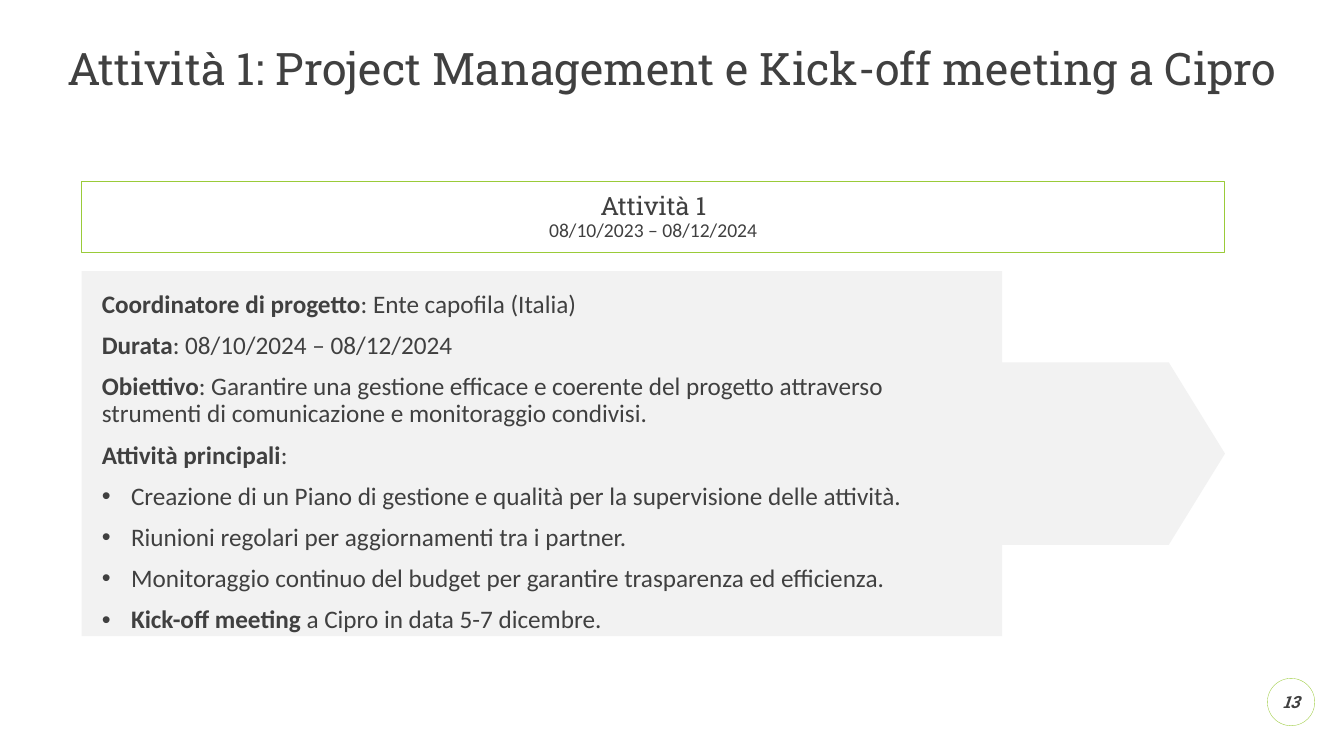
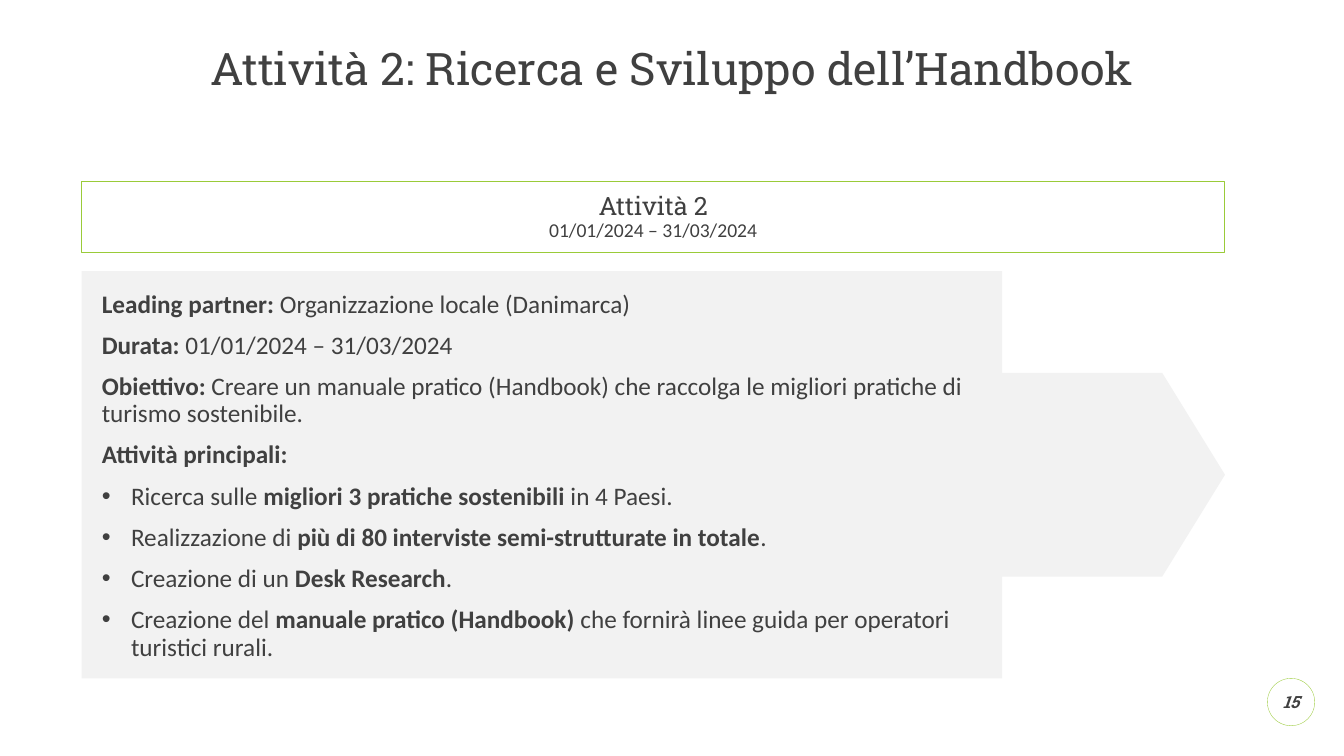
from dataclasses import dataclass

from lxml import etree
from pptx import Presentation
from pptx.dml.color import RGBColor
from pptx.enum import shapes, text
from pptx.oxml import ns
from pptx.util import Inches, Pt


@dataclass(frozen=True)
class Theme:
    ink: RGBColor = RGBColor(0x40, 0x40, 0x40)
    green: RGBColor = RGBColor(0x9A, 0xCB, 0x39)
    panel: RGBColor = RGBColor(0xF2, 0xF2, 0xF2)
    heading_font: str = "Roboto Slab"
    body_font: str = "Calibri"
    title_size: int = 32
    body_size: int = 18
    date_size: int = 14
    number_size: int = 12
    line_spacing: float = 0.9
    space_before: int = 10
    left: float = 0.81
    width: float = 11.34
    bullet_indent: float = 0.29


THEME = Theme()
CENTER = text.PP_ALIGN.CENTER
LEFT = text.PP_ALIGN.LEFT
TOP = text.MSO_ANCHOR.TOP
MIDDLE = text.MSO_ANCHOR.MIDDLE

# Double asterisks enclose bold words; a leading "• " makes a bullet.
ACTIVITIES = [
    {
        "title": "Attività 1: Project Management e Kick-off meeting a Cipro",
        "name": "Attività 1",
        "dates": "08/10/2023 – 08/12/2024",
        "number": "13",
        "panel_height": 3.62,
        "details": [
            "**Coordinatore di progetto**: Ente capofila (Italia)",
            "**Durata**: 08/10/2024 – 08/12/2024",
            "**Obiettivo**: Garantire una gestione efficace e coerente del progetto "
            "attraverso strumenti di comunicazione e monitoraggio condivisi.",
            "**Attività principali**:",
            "• Creazione di un Piano di gestione e qualità per la supervisione delle attività.",
            "• Riunioni regolari per aggiornamenti tra i partner.",
            "• Monitoraggio continuo del budget per garantire trasparenza ed efficienza.",
            "• **Kick-off meeting** a Cipro in data 5-7 dicembre.",
        ],
    },
    {
        "title": "Attività 2: Ricerca e Sviluppo dell’Handbook",
        "name": "Attività 2",
        "dates": "01/01/2024 – 31/03/2024",
        "number": "15",
        "panel_height": 4.04,
        "details": [
            "**Leading partner:** Organizzazione locale (Danimarca)",
            "**Durata:** 01/01/2024 – 31/03/2024",
            "**Obiettivo:** Creare un manuale pratico (Handbook) che raccolga "
            "le migliori pratiche di turismo sostenibile.",
            "**Attività principali:**",
            "• Ricerca sulle **migliori 3 pratiche sostenibili** in 4 Paesi.",
            "• Realizzazione di **più di 80 interviste semi-strutturate in totale**.",
            "• Creazione di un **Desk Research**.",
            "• Creazione del **manuale pratico (Handbook)** che fornirà linee guida "
            "per operatori turistici rurali.",
        ],
    },
]


def style_run(r, font, size, bold=False, italic=False):
    r.font.name = font
    r.font.size = Pt(size)
    r.font.bold = bold
    r.font.italic = italic
    r.font.color.rgb = THEME.ink


def style_paragraph(p, align=LEFT, space_before=0):
    p.alignment = align
    p.line_spacing = THEME.line_spacing
    p.space_before = Pt(space_before)


def set_frame(tf, anchor=MIDDLE, insets=(0, 0, 0, 0)):
    """Insets run left, top, right, bottom, in inches."""
    tf.word_wrap = True
    tf.auto_size = text.MSO_AUTO_SIZE.NONE
    tf.vertical_anchor = anchor
    (tf.margin_left, tf.margin_top,
     tf.margin_right, tf.margin_bottom) = map(Inches, insets)


def add_box(slide, kind, box, fill=None, line=None, line_width=0.75):
    sp = slide.shapes.add_shape(kind, *map(Inches, box))
    sp.shadow.inherit = False
    if fill is None:
        sp.fill.background()
    else:
        sp.fill.solid()
        sp.fill.fore_color.rgb = fill
    if line is None:
        sp.line.fill.background()
    else:
        sp.line.color.rgb = line
        sp.line.width = Pt(line_width)
    return sp


def set_title(slide, title):
    sp = slide.shapes.title
    sp.left, sp.top, sp.width, sp.height = map(Inches, (0.47, 0.47, 12.4, 0.47))
    tf = sp.text_frame
    set_frame(tf)
    tf.text = title
    p = tf.paragraphs[0]
    style_paragraph(p, CENTER)
    style_run(p.runs[0], THEME.heading_font, THEME.title_size)


def add_header(slide, name, dates):
    sp = add_box(slide, shapes.MSO_SHAPE.RECTANGLE,
                 (THEME.left, 1.8, THEME.width, 0.71), line=THEME.green)
    tf = sp.text_frame
    set_frame(tf, TOP, (0, 0.12, 0, 0))
    p = tf.paragraphs[0]
    p.text = f"{name}\v{dates}"
    style_paragraph(p, CENTER, THEME.space_before)
    name_run, dates_run = p.runs
    style_run(name_run, THEME.heading_font, THEME.body_size)
    style_run(dates_run, THEME.body_font, THEME.date_size)


def add_bullet(p):
    pPr = p._p.get_or_add_pPr()
    indent = Inches(THEME.bullet_indent)
    pPr.set("marL", str(indent))
    pPr.set("indent", str(-indent))
    etree.SubElement(pPr, ns.qn("a:buFont")).set("typeface", "Arial")
    etree.SubElement(pPr, ns.qn("a:buChar")).set("char", "•")


def add_details(slide, details, height):
    sp = add_box(slide, shapes.MSO_SHAPE.RIGHT_ARROW_CALLOUT,
                 (THEME.left, 2.69, THEME.width, height), fill=THEME.panel)
    for i, value in enumerate((0.5, 0.25, 0.154, 0.805)):
        sp.adjustments[i] = value
    tf = sp.text_frame
    set_frame(tf, TOP, (0.2, 0.2, 0.2, 0))
    for i, detail in enumerate(details):
        p = tf.add_paragraph() if i else tf.paragraphs[0]
        style_paragraph(p, space_before=THEME.space_before)
        if detail.startswith("• "):
            add_bullet(p)
        for j, part in enumerate(detail.removeprefix("• ").split("**")):
            if part:
                r = p.add_run()
                r.text = part
                style_run(r, THEME.body_font, THEME.body_size, bold=j % 2 == 1)


def add_page_number(slide, number):
    sp = add_box(slide, shapes.MSO_SHAPE.OVAL, (12.57, 6.73, 0.47, 0.47),
                 line=THEME.green, line_width=0.25)
    tf = sp.text_frame
    set_frame(tf)
    tf.text = number
    p = tf.paragraphs[0]
    p.alignment = CENTER
    style_run(p.runs[0], THEME.heading_font, THEME.number_size, bold=True, italic=True)


def main():
    prs = Presentation()
    prs.slide_width, prs.slide_height = Inches(13.33), Inches(7.5)
    title_only = prs.slide_layouts[5]
    for activity in ACTIVITIES:
        slide = prs.slides.add_slide(title_only)
        set_title(slide, activity["title"])
        add_header(slide, activity["name"], activity["dates"])
        add_details(slide, activity["details"], activity["panel_height"])
        add_page_number(slide, activity["number"])
    prs.save("out.pptx")


if __name__ == "__main__":
    main()
